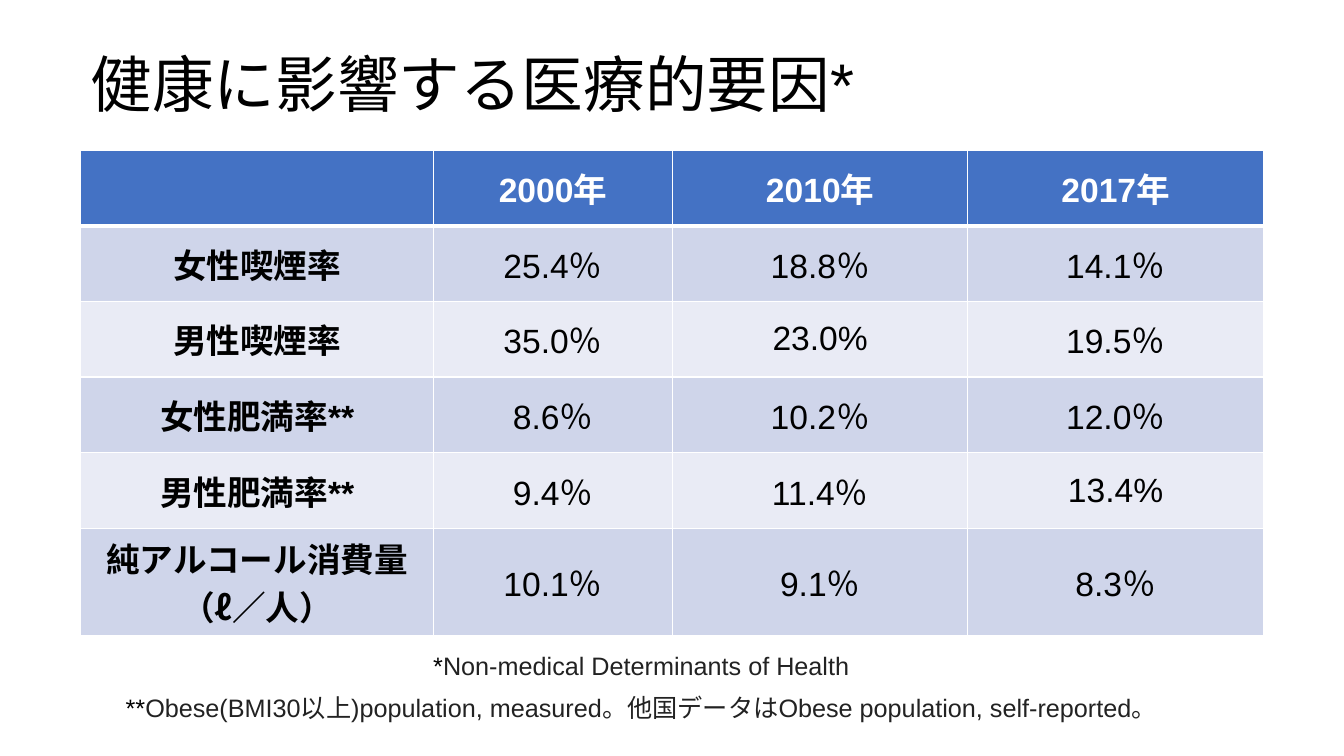
from lxml import etree
from pptx import Presentation
from pptx import util as u
from pptx.dml.color import RGBColor
from pptx.enum import text
from pptx.oxml import ns

PX = 9144  # 100 px to the inch
FONT = "Arial"
HUES = {"ink": "000000", "note": "222222", "white": "FFFFFF",
        "head": "4472C4", "dark": "CFD5EA", "light": "E9EBF5"}

COLS = [350, 237, 293, 293]
ROWS = [75] * 5 + [94]
DATA = [
    ["", "2000年", "2010年", "2017年"],
    ["女性喫煙率", "25.4％", "18.8％", "14.1％"],
    ["男性喫煙率", "35.0％", "23.0%", "19.5％"],
    ["女性肥満率**", "8.6％", "10.2％", "12.0％"],
    ["男性肥満率**", "9.4％", "11.4％", "13.4%"],
    ["純アルコール消費量\n（ℓ／人）", "10.1％", "9.1％", "8.3％"],
]
NOTES = [
    ("*", "Non-medical Determinants of Health"),
    ("**", "Obese(BMI30以上)population, measured。"
           "他国データはObese population, self-reported。"),
]


def hue(name):
    return RGBColor.from_string(HUES[name])


def px(*nums):
    return [u.Emu(n * PX) for n in nums]


def style(font, size, color, bold=False):
    font.name, font.size, font.bold = FONT, u.Pt(size), bold
    font.color.rgb = hue(color)


def add_title(slide, words):
    title = slide.shapes.title
    title.left, title.top, title.width, title.height = px(80, 41, 1185, 84)
    frame = title.text_frame
    frame.text = words
    frame.auto_size = text.MSO_AUTO_SIZE.NONE
    frame.vertical_anchor = text.MSO_ANCHOR.BOTTOM
    para = frame.paragraphs[0]
    para.alignment = text.PP_ALIGN.LEFT
    para.line_spacing = 0.9
    style(para.font, 44, "ink")


def add_edges(cell, base):
    # Border lines come before the fill in the cell properties
    props = cell._tc.get_or_add_tcPr()
    sides = {"lnL": 1, "lnR": 1, "lnT": 1, "lnB": base}
    for spot, (side, width) in enumerate(sides.items()):
        line = etree.Element(ns.qn("a:" + side), w=str(u.Pt(width)))
        fill = etree.SubElement(line, ns.qn("a:solidFill"))
        etree.SubElement(fill, ns.qn("a:srgbClr"), val=HUES["white"])
        props.insert(spot, line)


def fill_cell(cell, words, row, col):
    head = row == 0
    cell.text = words
    cell.vertical_anchor = text.MSO_ANCHOR.MIDDLE
    cell.fill.solid()
    cell.fill.fore_color.rgb = hue("head" if head else "dark" if row % 2 else "light")
    for para in cell.text_frame.paragraphs:
        para.alignment = text.PP_ALIGN.CENTER
        style(para.font, 24, "white" if head else "ink", head or col == 0)
    add_edges(cell, 3 if head else 1)


def add_grid(slide):
    box = px(80, 149, sum(COLS), sum(ROWS))
    grid = slide.shapes.add_table(len(ROWS), len(COLS), *box).table
    for col, width in zip(grid.columns, px(*COLS)):
        col.width = width
    for row, height in zip(grid.rows, px(*ROWS)):
        row.height = height
    for row, line in enumerate(DATA):
        for col, words in enumerate(line):
            fill_cell(grid.cell(row, col), words, row, col)


def add_notes(slide):
    frame = slide.shapes.add_textbox(*px(80, 644, 1112, 106)).text_frame
    frame.word_wrap = True
    for num, (mark, words) in enumerate(NOTES):
        para = frame.add_paragraph() if num else frame.paragraphs[0]
        para.alignment = text.PP_ALIGN.CENTER
        para.line_spacing = 0.9
        para.space_before = u.Pt(10)
        for part, color in ((mark, "ink"), (words, "note")):
            run = para.add_run()
            run.text = part
            style(run.font, 18, color)


def main():
    deck = Presentation()
    deck.slide_width, deck.slide_height = px(1333, 750)
    slide = deck.slides.add_slide(deck.slide_layouts[5])
    add_title(slide, "健康に影響する医療的要因*")
    add_grid(slide)
    add_notes(slide)
    deck.save("out.pptx")


if __name__ == "__main__":
    main()
